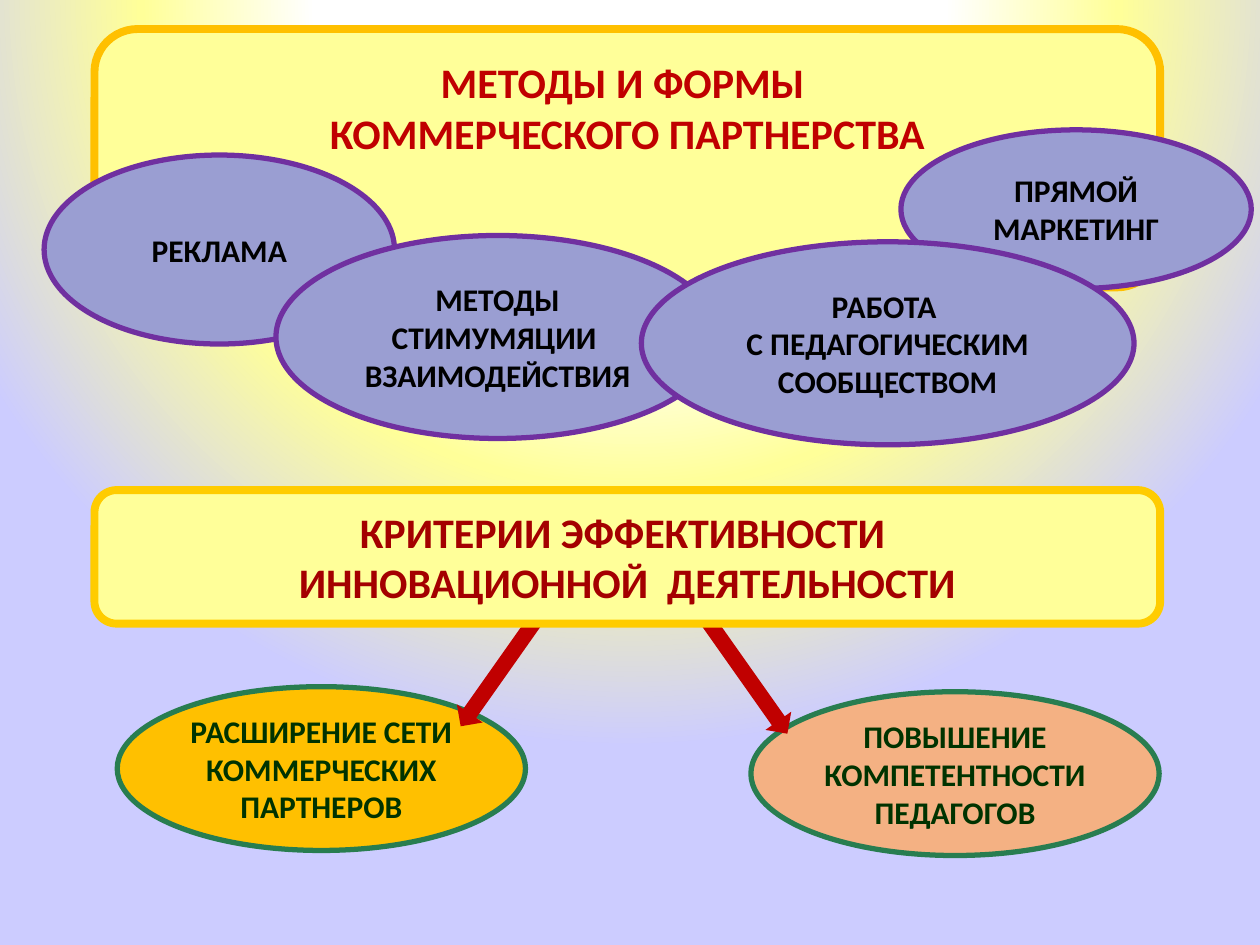
"""Build a slide on methods of commercial partnership and criteria of effectiveness."""
import pptx
import pptx.dml.color
import pptx.enum.shapes
import pptx.enum.text
import pptx.oxml
import pptx.oxml.ns
import pptx.util

Pt = pptx.util.Pt
SHAPE = pptx.enum.shapes.MSO_SHAPE


def color(value):
    return pptx.dml.color.RGBColor.from_string(value)


def add_block(text, kind, box, fill, line=None, width=3, ink="000000", size=18, bottom=3.6, rotation=0):
    block = slide.shapes.add_shape(kind, *[Pt(length) for length in box])
    block.shadow.inherit = False
    block.rotation = rotation
    block.fill.solid()
    block.fill.fore_color.rgb = color(fill)
    if line:
        block.line.color.rgb = color(line)
        block.line.width = Pt(width)
    else:
        block.line.fill.background()
    if not text:
        return
    frame = block.text_frame
    frame.word_wrap = True
    frame.vertical_anchor = pptx.enum.text.MSO_ANCHOR.MIDDLE
    frame.margin_bottom = Pt(bottom)
    frame.text = text
    for paragraph in frame.paragraphs:
        paragraph.alignment = pptx.enum.text.PP_ALIGN.CENTER
        font = paragraph.runs[0].font
        font.name = "Calibri"
        font.size = Pt(size)
        font.bold = True
        font.color.rgb = color(ink)


deck = pptx.Presentation()
deck.slide_width, deck.slide_height = Pt(720), Pt(540)
slide = deck.slides.add_slide(deck.slide_layouts[6])

slide.background.fill.gradient()
gradient = slide.element.find(".//" + pptx.oxml.ns.qn("a:gradFill"))
stops = "".join(
    f'<a:gs pos="{position * 1000}"><a:srgbClr val="{tone}"/></a:gs>'
    for position, tone in [(40, "FFFFFF"), (62, "FFFF99"), (95, "CCCCFF")]
)
gradient.getparent().replace(gradient, pptx.oxml.parse_xml(
    f'<a:gradFill {pptx.oxml.ns.nsdecls("a")} rotWithShape="1"><a:gsLst>{stops}</a:gsLst>'
    '<a:path path="circle"><a:fillToRect l="50000" t="-80000" r="50000" b="180000"/></a:path>'
    '</a:gradFill>'
))

add_block("МЕТОДЫ И ФОРМЫ \nКОММЕРЧЕСКОГО ПАРТНЕРСТВА", SHAPE.ROUNDED_RECTANGLE,
          (54, 16.6, 609, 147.6), "FFFF99", "FFC000", 4.5, "C00000", 24, bottom=62)

methods = [
    ("РЕКЛАМА", (25.2, 88.6, 200.2, 108)),
    ("МЕТОДЫ СТИМУМЯЦИИ  ВЗАИМОДЕЙСТВИЯ", (157.7, 134.6, 253.4, 116)),
    ("ПРЯМОЙ МАРКЕТИНГ", (514.8, 74.2, 200.2, 90.7)),
    ("РАБОТА \nС ПЕДАГОГИЧЕСКИМ СООБЩЕСТВОМ", (366.5, 138.2, 281.5, 116)),
]
for method, box in methods:
    add_block(method, SHAPE.OVAL, box, "9A9ED2", "7030A0")

criteria = [
    ("РАСШИРЕНИЕ СЕТИ КОММЕРЧЕСКИХ ПАРТНЕРОВ", (67, 392.4, 233.3, 93.6), "FFC000"),
    ("ПОВЫШЕНИЕ КОМПЕТЕНТНОСТИ ПЕДАГОГОВ", (429.1, 395.3, 233.3, 93.6), "F4B183"),
]
for criterion, box, fill in criteria:
    add_block(criterion, SHAPE.OVAL, box, fill, "287D50", ink="003300")

for box, rotation in [((416.9, 343.4, 18, 83.5), 324.8), ((275.8, 347, 18, 74.9), 35.2)]:
    add_block("", SHAPE.DOWN_ARROW, box, "C00000", rotation=rotation)

add_block("КРИТЕРИИ ЭФФЕКТИВНОСТИ \nИННОВАЦИОННОЙ  ДЕЯТЕЛЬНОСТИ", SHAPE.ROUNDED_RECTANGLE,
          (54, 280.1, 609, 76.3), "FFFF99", "FFCC00", 4.5, "A40000", 24)

deck.save("out.pptx")
